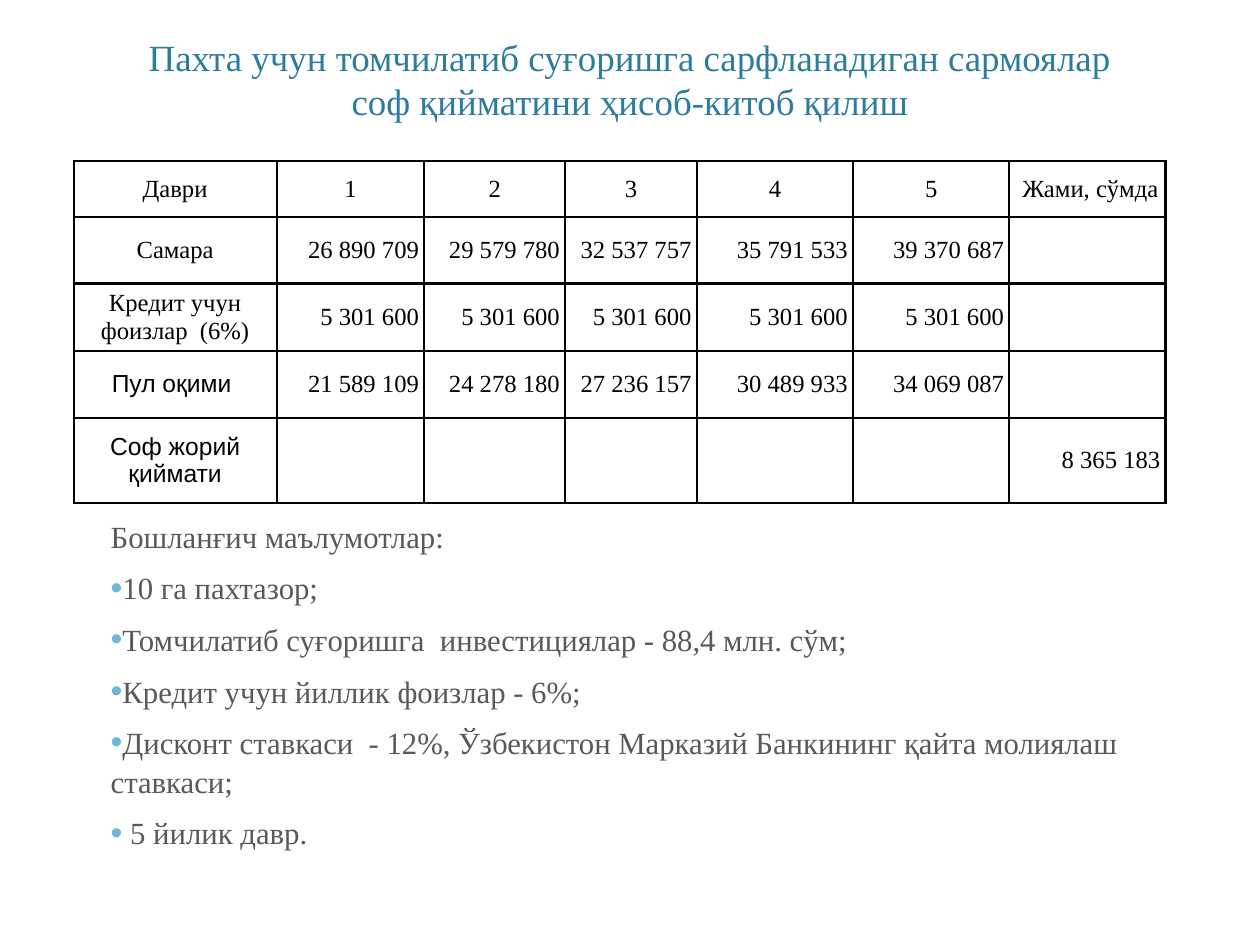
from dataclasses import dataclass

from lxml import etree
from pptx import Presentation
from pptx.dml.color import RGBColor
from pptx.enum.text import MSO_ANCHOR, MSO_AUTO_SIZE, PP_ALIGN
from pptx.oxml.ns import qn
from pptx.util import Pt

CENTER, RIGHT = PP_ALIGN.CENTER, PP_ALIGN.RIGHT
BOTTOM, MIDDLE, TOP = MSO_ANCHOR.BOTTOM, MSO_ANCHOR.MIDDLE, MSO_ANCHOR.TOP
NO_AUTOFIT = MSO_AUTO_SIZE.NONE


@dataclass(frozen=True)
class Theme:
    serif: str = "Times New Roman"
    sans: str = "Arial"
    title: str = "2C7C9F"
    body: str = "595959"
    bullet: str = "6FB7D7"
    ink: str = "000000"
    title_size: int = 30
    body_size: int = 25
    table_size: int = 20


THEME = Theme()

TITLE = ("Пахта учун томчилатиб суғоришга сарфланадиган сармоялар "
         "соф қийматини ҳисоб-китоб қилиш")
INTEREST = ["5 301 600"] * 5
ROWS = [
    ["Даври", "1", "2", "3", "4", "5", " Жами, сўмда"],
    ["Самара", "26 890 709", "29 579 780", "32 537 757", "35 791 533", "39 370 687", ""],
    ["Кредит учун фоизлар  (6%)", *INTEREST, ""],
    ["Пул оқими ", "21 589 109", "24 278 180", "27 236 157", "30 489 933", "34 069 087", ""],
    ["Соф жорий қиймати", *[""] * 5, "8 365 183"],
]
SANS_LABEL_ROWS = (3, 4)
COL_WIDTHS = [165, 120, 114.5, 107, 127, 127, 127]
ROW_HEIGHTS = [45.4, 54, 54.7, 54.7, 69.1]

INPUTS_HEADING = "Бошланғич маълумотлар:"
INPUTS = [
    "10 га пахтазор;",
    "Томчилатиб суғоришга  инвестициялар - 88,4 млн. сўм;",
    "Кредит учун йиллик фоизлар - 6%;",
    "Дисконт ставкаси  - 12%, Ўзбекистон Марказий Банкининг қайта молиялаш  ставкаси;",
    " 5 йилик давр.",
]


def format_runs(p, size, color, font):
    for r in p.runs:
        r.font.size = Pt(size)
        r.font.name = font
        r.font.color.rgb = RGBColor.from_string(color)


def set_frame(tf, anchor):
    tf.word_wrap = True
    tf.auto_size = NO_AUTOFIT
    tf.vertical_anchor = anchor
    tf.margin_left = tf.margin_right = Pt(10)
    tf.margin_top = tf.margin_bottom = Pt(5)


def set_bullet(pPr, color):
    clr = etree.SubElement(pPr, qn("a:buClr"))
    etree.SubElement(clr, qn("a:srgbClr"), val=color)
    etree.SubElement(pPr, qn("a:buSzPct"), val="110000")
    etree.SubElement(pPr, qn("a:buFont"), typeface=THEME.sans)
    etree.SubElement(pPr, qn("a:buChar"), char="•")


def set_borders(cell, color, width):
    tcPr = cell._tc.get_or_add_tcPr()
    for i, side in enumerate(("a:lnL", "a:lnR", "a:lnT", "a:lnB")):
        ln = etree.Element(qn(side), w=str(Pt(width)))
        fill = etree.SubElement(ln, qn("a:solidFill"))
        etree.SubElement(fill, qn("a:srgbClr"), val=color)
        tcPr.insert(i, ln)


def add_title(slide):
    sp = slide.shapes.title
    sp.left, sp.top, sp.width, sp.height = Pt(100), Pt(20), Pt(824), Pt(85)
    tf = sp.text_frame
    set_frame(tf, BOTTOM)
    tf.text = TITLE
    p = tf.paragraphs[0]
    p.alignment = CENTER
    format_runs(p, THEME.title_size, THEME.title, THEME.serif)


def add_inputs(slide):
    sp = slide.shapes.add_textbox(Pt(59), Pt(414), Pt(889), Pt(417))
    tf = sp.text_frame
    set_frame(tf, TOP)
    for i, text in enumerate([INPUTS_HEADING, *INPUTS]):
        p = tf.add_paragraph() if i else tf.paragraphs[0]
        p.text = text
        p.line_spacing = 1.05
        p.space_before = Pt(10.5 if i else 28.5)
        pPr = p._p.get_or_add_pPr()
        pPr.set("marL", str(Pt(21)))
        pPr.set("indent", "0")
        if i:
            set_bullet(pPr, THEME.bullet)
        format_runs(p, THEME.body_size, THEME.body, THEME.serif)


def fill_cell(cell, text, align, font):
    cell.fill.background()
    set_borders(cell, THEME.ink, 2)
    cell.vertical_anchor = MIDDLE
    cell.margin_left = cell.margin_right = Pt(4.3)
    cell.margin_top = cell.margin_bottom = Pt(4.3)
    cell.text = text
    p = cell.text_frame.paragraphs[0]
    p.alignment = align
    format_runs(p, THEME.table_size, THEME.ink, font)


def add_cash_flow_table(slide):
    frame = slide.shapes.add_table(len(ROWS), len(COL_WIDTHS), Pt(59.8), Pt(131),
                                   Pt(sum(COL_WIDTHS)), Pt(sum(ROW_HEIGHTS)))
    table = frame.table
    table.first_row = table.horz_banding = False
    for col, width in zip(table.columns, COL_WIDTHS):
        col.width = Pt(width)
    for row, height in zip(table.rows, ROW_HEIGHTS):
        row.height = Pt(height)
    for i, texts in enumerate(ROWS):
        for j, text in enumerate(texts):
            align = CENTER if i == 0 or j == 0 else RIGHT
            font = THEME.sans if j == 0 and i in SANS_LABEL_ROWS else THEME.serif
            fill_cell(table.cell(i, j), text, align, font)


def main():
    prs = Presentation()
    prs.slide_width, prs.slide_height = Pt(1024), Pt(768)
    slide = prs.slides.add_slide(prs.slide_layouts[5])
    add_title(slide)
    add_inputs(slide)
    add_cash_flow_table(slide)
    prs.save("out.pptx")


if __name__ == "__main__":
    main()
